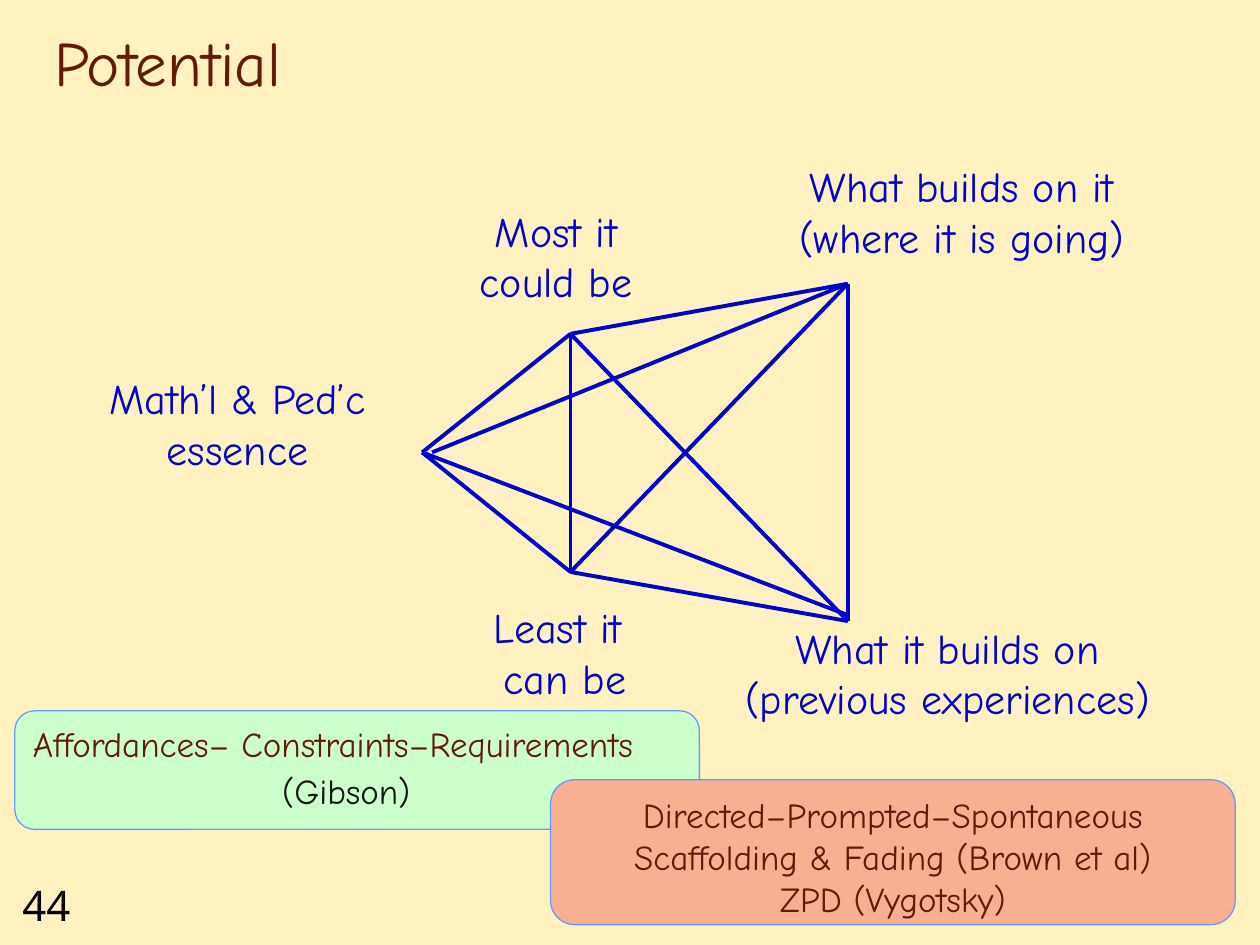
from itertools import combinations

from lxml import etree
from pptx import Presentation
from pptx import util as u
from pptx.dml.color import RGBColor
from pptx.enum import shapes, text
from pptx.oxml.ns import qn

COLOURS = {
    "background": "FFF2C0", "ink": "0000D4", "brown": "631908", "black": "000000",
    "dark": "161616", "green": "CCFFCC", "salmon": "F9B092", "border": "6699FF",
}
LEFT, CENTER = text.PP_ALIGN.LEFT, text.PP_ALIGN.CENTER
CORNERS = {
    "most": (11.5, 6.73), "least": (11.5, 11.53), "essence": (8.51, 9.12),
    "future": (17.09, 5.72), "past": (17.09, 12.52),
}
SHIFTED_ENDS = {
    ("essence", "future"): ((8.71, 9.12), CORNERS["future"]),
    ("essence", "past"): (CORNERS["essence"], (17.09, 12.4)),
}
LABELS = [
    ((8.71, 4.01, 5, 2.31), ["Most it could be"]),
    ((15.29, 3.12, 8.2, 2.31), ["What builds on it\v(where it is going)"]),
    ((0.69, 7.39, 8.2, 2.31), ["Math’l & Ped’c\vessence"]),
    ((9.09, 12.01, 4.6, 2.31), ["Least it \vcan be"]),
    ((14.5, 12.42, 9.2, 2.31), ["What it builds on", "(previous experiences)"]),
]


class SlideBuilder:
    """Draws styled elements on the current slide."""

    def __init__(self, slide, font="Comic Neue"):
        self.slide = slide
        self.font = font
        self.slide.background.fill.solid()
        self.slide.background.fill.fore_color.rgb = self.colour("background")

    def colour(self, name):
        return RGBColor.from_string(COLOURS[name])

    def place(self, shape, box):
        shape.left, shape.top, shape.width, shape.height = map(u.Cm, box)

    def add_words(self, paragraph, words, size, colour, font=None):
        for index, line in enumerate(words.split("\v")):
            if index:
                paragraph.add_line_break()
            run = paragraph.add_run()
            run.text = line
            run.font.size = u.Pt(size)
            run.font.name = font or self.font
            run.font.color.rgb = self.colour(colour)

    def fill_text(self, shape, lines, size, colour, align, font=None):
        frame = shape.text_frame
        frame.word_wrap = True
        frame.vertical_anchor = text.MSO_ANCHOR.TOP
        for index, line in enumerate(lines):
            paragraph = frame.add_paragraph() if index else frame.paragraphs[0]
            paragraph.alignment = align
            self.add_words(paragraph, line, size, colour, font)

    def title(self, box, words):
        title = self.slide.shapes.title
        self.place(title, box)
        self.fill_text(title, [words], 36, "brown", LEFT)
        title.text_frame.vertical_anchor = text.MSO_ANCHOR.BOTTOM
        title.text_frame.auto_size = text.MSO_AUTO_SIZE.NONE

    def label(self, box, lines, size=24, colour="ink", align=CENTER, font=None):
        label = self.slide.shapes.add_textbox(*map(u.Cm, box))
        self.fill_text(label, lines, size, colour, align, font)
        return label

    def line(self, start, end):
        line = self.slide.shapes.add_connector(
            shapes.MSO_CONNECTOR.STRAIGHT, *map(u.Cm, start + end))
        line.line.color.rgb = self.colour("ink")
        line.line.width = u.Pt(2.25)
        etree.SubElement(line._element.spPr, qn("a:effectLst"))

    def panel(self, box, fill, lines, align):
        panel = self.slide.shapes.add_shape(
            shapes.MSO_SHAPE.ROUNDED_RECTANGLE, *map(u.Cm, box))
        panel.shadow.inherit = False
        panel.fill.solid()
        panel.fill.fore_color.rgb = self.colour(fill)
        panel.line.color.rgb = self.colour("border")
        panel.line.width = u.Pt(0.75)
        self.fill_text(panel, lines, 20, "brown", align)


def main():
    presentation = Presentation()
    presentation.slide_width, presentation.slide_height = u.Cm(25.4), u.Cm(19.05)
    builder = SlideBuilder(presentation.slides.add_slide(presentation.slide_layouts[5]))

    builder.label((0.2, 17.6, 1.9, 1.27), ["44"], 24, "black", LEFT, "Noto Sans")
    builder.title((0.84, 0.43, 21.59, 1.7), "Potential")
    for pair in combinations(CORNERS, 2):
        start, end = SHIFTED_ENDS.get(pair, [CORNERS[name] for name in pair])
        builder.line(start, end)
    for box, lines in LABELS:
        builder.label(box, lines)

    builder.panel((0.3, 14.33, 13.8, 2.39), "green",
                  ["Affordances– Constraints–Requirements"], LEFT)
    builder.panel((11.1, 15.72, 13.8, 2.92), "salmon",
                  ["Directed–Prompted–Spontaneous",
                   "Scaffolding & Fading (Brown et al)", "ZPD (Vygotsky)"], CENTER)
    source = builder.label((5.11, 15.11, 4.4, 1.45), [" "], 28, "brown", LEFT)
    builder.add_words(source.text_frame.paragraphs[0], "(Gibson)", 20, "dark")

    presentation.save("out.pptx")


if __name__ == "__main__":
    main()
